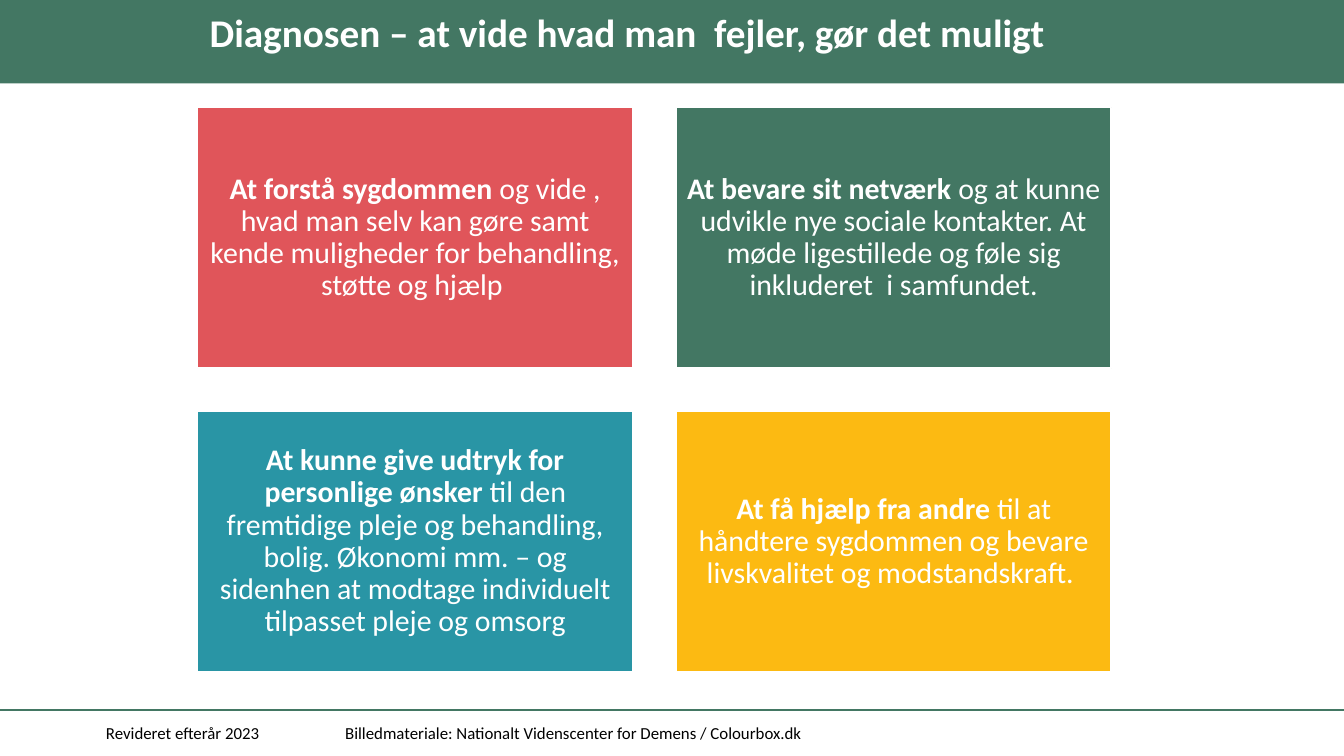
import pptx
import pptx.util
import pptx.dml.color
import pptx.enum.shapes
import pptx.enum.text
import pptx.oxml.ns
from lxml import etree

Inches = pptx.util.Inches
Pt = pptx.util.Pt
ALIGN = pptx.enum.text.PP_ALIGN
MIDDLE = pptx.enum.text.MSO_ANCHOR.MIDDLE

COLORS = {
    "green": "437763",
    "red": "E0555A",
    "teal": "2995A5",
    "gold": "FCBA12",
    "white": "FFFFFF",
    "black": "000000",
}

# Fill, bold lead and remaining text of each card, row by row
CARDS = [
    ("red", "At forstå sygdommen ",
     "og vide , hvad man selv kan gøre samt kende muligheder for behandling, "
     "støtte og hjælp "),
    ("green", "At bevare sit netværk ",
     "og at kunne udvikle nye sociale kontakter. At møde ligestillede og føle "
     "sig inkluderet  i samfundet."),
    ("teal", "At kunne give udtryk for personlige ønsker ",
     "til den fremtidige pleje og behandling, bolig. Økonomi mm. – og sidenhen "
     "at modtage individuelt tilpasset pleje og omsorg"),
    ("gold", "At få hjælp fra andre ",
     "til at håndtere sygdommen og bevare livskvalitet og modstandskraft. "),
]


def color(name):
    return pptx.dml.color.RGBColor.from_string(COLORS[name])


def set_font(para, size, tone):
    para.font.name = "Calibri"
    para.font.size = Pt(size)
    para.font.color.rgb = color(tone)


def set_frame(frame, left, top, right, bottom):
    frame.word_wrap = True
    frame.auto_size = pptx.enum.text.MSO_AUTO_SIZE.NONE
    frame.vertical_anchor = MIDDLE
    frame.margin_left, frame.margin_right = Inches(left), Inches(right)
    frame.margin_top, frame.margin_bottom = Inches(top), Inches(bottom)


def add_box(slide, left, top, width, height, fill):
    box = slide.shapes.add_shape(
        pptx.enum.shapes.MSO_SHAPE.RECTANGLE,
        Inches(left), Inches(top), Inches(width), Inches(height))
    box.shadow.inherit = False
    box.fill.solid()
    box.fill.fore_color.rgb = color(fill)
    box.line.fill.background()
    return box


def add_rule(slide, top):
    rule = slide.shapes.add_connector(
        pptx.enum.shapes.MSO_CONNECTOR.STRAIGHT,
        Inches(0), Inches(top), Inches(10), Inches(top))
    rule.line.color.rgb = color("green")
    rule.line.width = Pt(1)
    props = rule._element.spPr
    etree.SubElement(props, pptx.oxml.ns.qn("a:effectLst"))


def add_title(slide, text):
    title = slide.shapes.title
    title.left, title.top = Inches(1.46), Inches(0.04)
    title.width, title.height = Inches(6.57), Inches(0.44)
    set_frame(title.text_frame, 0.1, 0, 0, 0)
    para = title.text_frame.paragraphs[0]
    para.text = text
    para.alignment = ALIGN.LEFT
    para.line_spacing = 0.9
    set_font(para, 21, "white")
    para.font.bold = True
    # Bring the title in front of the band
    slide.shapes._spTree.append(title._element)


def add_card(slide, left, top, fill, lead, rest):
    card = add_box(slide, left, top, 3.24, 1.94, fill)
    card.line.color.rgb = color("white")
    card.line.width = Pt(1)
    set_frame(card.text_frame, 0.07, 0.07, 0.07, 0.07)
    para = card.text_frame.paragraphs[0]
    para.alignment = ALIGN.CENTER
    para.line_spacing = 0.9
    set_font(para, 16, "white")
    run = para.add_run()
    run.text = lead
    run.font.bold = True
    para.add_run().text = rest


def add_note(slide, left, width, text):
    note = slide.shapes.add_textbox(
        Inches(left), Inches(5.3), Inches(width), Inches(0.3))
    set_frame(note.text_frame, 0.1, 0.05, 0.1, 0.05)
    para = note.text_frame.paragraphs[0]
    para.text = text
    set_font(para, 9, "black")


def main():
    # Widescreen page, 16 to 9
    deck = pptx.Presentation()
    deck.slide_width = Inches(10)
    deck.slide_height = Inches(10 * 9 / 16)
    slide = deck.slides.add_slide(deck.slide_layouts[5])

    # Header band and title
    add_box(slide, 0, 0, 10, 0.62, "green")
    add_title(slide, "Diagnosen – at vide hvad man  fejler, gør det muligt")

    # Two by two grid of cards
    for i, card in enumerate(CARDS):
        row, col = divmod(i, 2)
        add_card(slide, 1.47 + col * 3.56, 0.8 + row * 2.26, *card)

    # Footer
    add_rule(slide, 5.28)
    add_note(slide, 0.69, 1.68, "Revideret efterår 2023")
    add_note(slide, 2.47, 6.3, "Billedmateriale: Nationalt Videnscenter "
             "for Demens / Colourbox.dk")

    deck.save("out.pptx")


if __name__ == "__main__":
    main()
